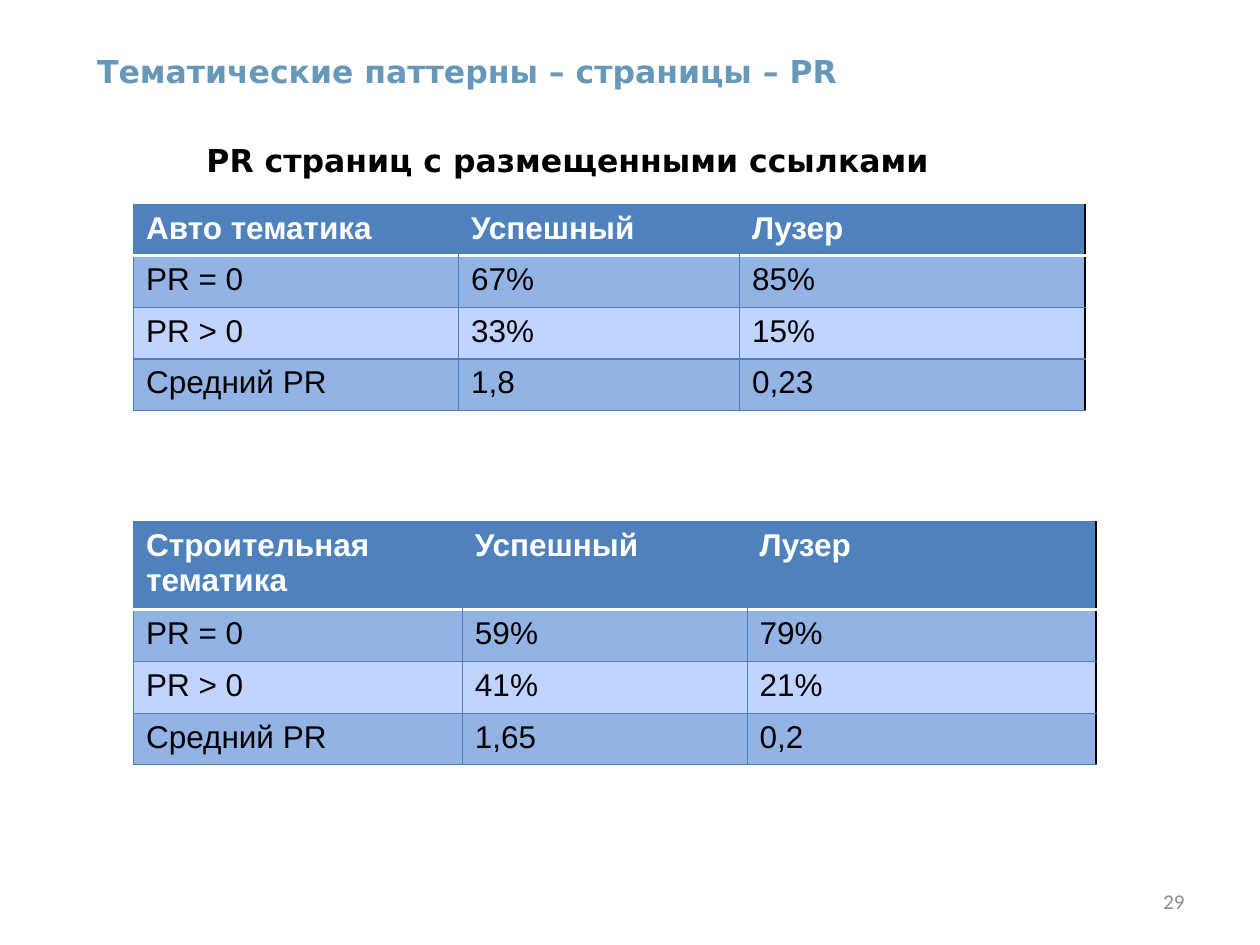
from dataclasses import dataclass

from lxml import etree
from pptx import Presentation
from pptx.dml.color import RGBColor
from pptx.enum.text import MSO_ANCHOR, MSO_AUTO_SIZE, PP_ALIGN
from pptx.oxml.ns import qn
from pptx.util import Inches, Pt

LEFT, RIGHT = PP_ALIGN.LEFT, PP_ALIGN.RIGHT
TOP, MIDDLE = MSO_ANCHOR.TOP, MSO_ANCHOR.MIDDLE
FIT_SHAPE, FIXED = MSO_AUTO_SIZE.SHAPE_TO_FIT_TEXT, MSO_AUTO_SIZE.NONE
TITLE_ONLY = 5


@dataclass(frozen=True)
class Theme:
    heading_font: str = "DejaVu Sans"
    table_font: str = "Arial"
    number_font: str = "Calibri"
    text_size: float = 18
    number_size: float = 12
    title: str = "6798BA"
    black: str = "000000"
    white: str = "FFFFFF"
    number: str = "898989"
    header: str = "4F81BD"
    dark_band: str = "93B3E5"
    light_band: str = "C0D4FF"
    grid: str = "4B7EBC"
    grid_width: float = 0.75
    edge_width: float = 1
    header_rule_width: float = 2


@dataclass(frozen=True)
class TopicTable:
    top: float
    column_widths: tuple[float, ...]
    header_height: float
    rows: tuple[tuple[str, ...], ...]


THEME = Theme()
TABLE_LEFT = 1.06
ROW_HEIGHT = 0.41
TOPIC_TABLES = (
    TopicTable(1.62, (2.58, 2.23, 2.74), ROW_HEIGHT, (
        ("Авто тематика", "Успешный", "Лузер"),
        ("PR = 0", "67%", "85%"),
        ("PR > 0", "33%", "15%"),
        ("Средний PR", "1,8", "0,23"),
    )),
    TopicTable(4.14, (2.61, 2.26, 2.77), 0.7, (
        ("Строительная тематика", "Успешный", "Лузер"),
        ("PR = 0", "59%", "79%"),
        ("PR > 0", "41%", "21%"),
        ("Средний PR", "1,65", "0,2"),
    )),
)


def write_text(text_frame, text: str, *, font: str, color: str,
               size: float = THEME.text_size, bold: bool = False,
               align=LEFT) -> None:
    paragraph = text_frame.paragraphs[0]
    paragraph.alignment = align
    run = paragraph.add_run()
    run.text = text
    run.font.name = font
    run.font.size = Pt(size)
    run.font.bold = bold
    run.font.color.rgb = RGBColor.from_string(color)


def place_text(shape, box: tuple[float, ...], text: str, *, anchor=TOP,
               wrap: bool = False, auto_size=FIT_SHAPE, **text_format) -> None:
    shape.left, shape.top, shape.width, shape.height = map(Inches, box)
    text_frame = shape.text_frame
    text_frame.word_wrap = wrap
    text_frame.auto_size = auto_size
    text_frame.vertical_anchor = anchor
    write_text(text_frame, text, **text_format)


def add_text(slide, box: tuple[float, ...], text: str, **text_format) -> None:
    shape = slide.shapes.add_textbox(*map(Inches, box))
    place_text(shape, box, text, **text_format)


def set_borders(cell, borders: dict[str, tuple[str, float]]) -> None:
    """Draw the given sides (L, R, T, B) and hide the others."""
    properties = cell._tc.get_or_add_tcPr()
    for index, side in enumerate("LRTB"):
        line = etree.Element(qn(f"a:ln{side}"))
        if side in borders:
            color, width = borders[side]
            line.set("w", str(Pt(width)))
            fill = etree.SubElement(line, qn("a:solidFill"))
            etree.SubElement(fill, qn("a:srgbClr"), val=color)
        else:
            etree.SubElement(line, qn("a:noFill"))
        properties.insert(index, line)


def cell_borders(is_header: bool, is_first: bool, is_last: bool,
                 below_header: bool) -> dict[str, tuple[str, float]]:
    grid = (THEME.grid, THEME.grid_width)
    header_rule = (THEME.white, THEME.header_rule_width)
    borders = {"T": header_rule if below_header else grid,
               "B": header_rule if is_header else grid}
    if is_first or not is_header:
        borders["L"] = grid
    if is_last:
        borders["R"] = (THEME.black, THEME.edge_width)
    elif not is_header:
        borders["R"] = grid
    return borders


def add_topic_table(slide, topic: TopicTable) -> None:
    row_count, column_count = len(topic.rows), len(topic.column_widths)
    heights = [topic.header_height] + [ROW_HEIGHT] * (row_count - 1)
    table = slide.shapes.add_table(
        row_count, column_count, Inches(TABLE_LEFT), Inches(topic.top),
        Inches(sum(topic.column_widths)), Inches(sum(heights))).table
    for column, width in zip(table.columns, topic.column_widths):
        column.width = Inches(width)
    for row, height in zip(table.rows, heights):
        row.height = Inches(height)

    for row_index, values in enumerate(topic.rows):
        is_header = row_index == 0
        band = THEME.dark_band if row_index % 2 else THEME.light_band
        for column_index, value in enumerate(values):
            cell = table.cell(row_index, column_index)
            cell.fill.solid()
            cell.fill.fore_color.rgb = RGBColor.from_string(
                THEME.header if is_header else band)
            write_text(cell.text_frame, value, font=THEME.table_font,
                       color=THEME.white if is_header else THEME.black,
                       bold=is_header)
            set_borders(cell, cell_borders(
                is_header, column_index == 0,
                column_index == column_count - 1, row_index == 1))


def main() -> None:
    presentation = Presentation()
    presentation.slide_width = Inches(10)
    presentation.slide_height = Inches(7.5)
    slide = presentation.slides.add_slide(
        presentation.slide_layouts[TITLE_ONLY])

    place_text(slide.shapes.title, (0.67, 0.36, 6.22, 0.4),
               "Тематические паттерны – страницы – PR",
               font=THEME.heading_font, color=THEME.title, bold=True)
    add_text(slide, (1.54, 1.07, 5.99, 0.4),
             "PR страниц с размещенными ссылками",
             font=THEME.heading_font, color=THEME.black, bold=True)
    for topic in TOPIC_TABLES:
        add_topic_table(slide, topic)
    add_text(slide, (7.17, 6.95, 2.33, 0.4), "29", anchor=MIDDLE, wrap=True,
             auto_size=FIXED, font=THEME.number_font, color=THEME.number,
             size=THEME.number_size, align=RIGHT)
    presentation.save("out.pptx")


if __name__ == "__main__":
    main()
